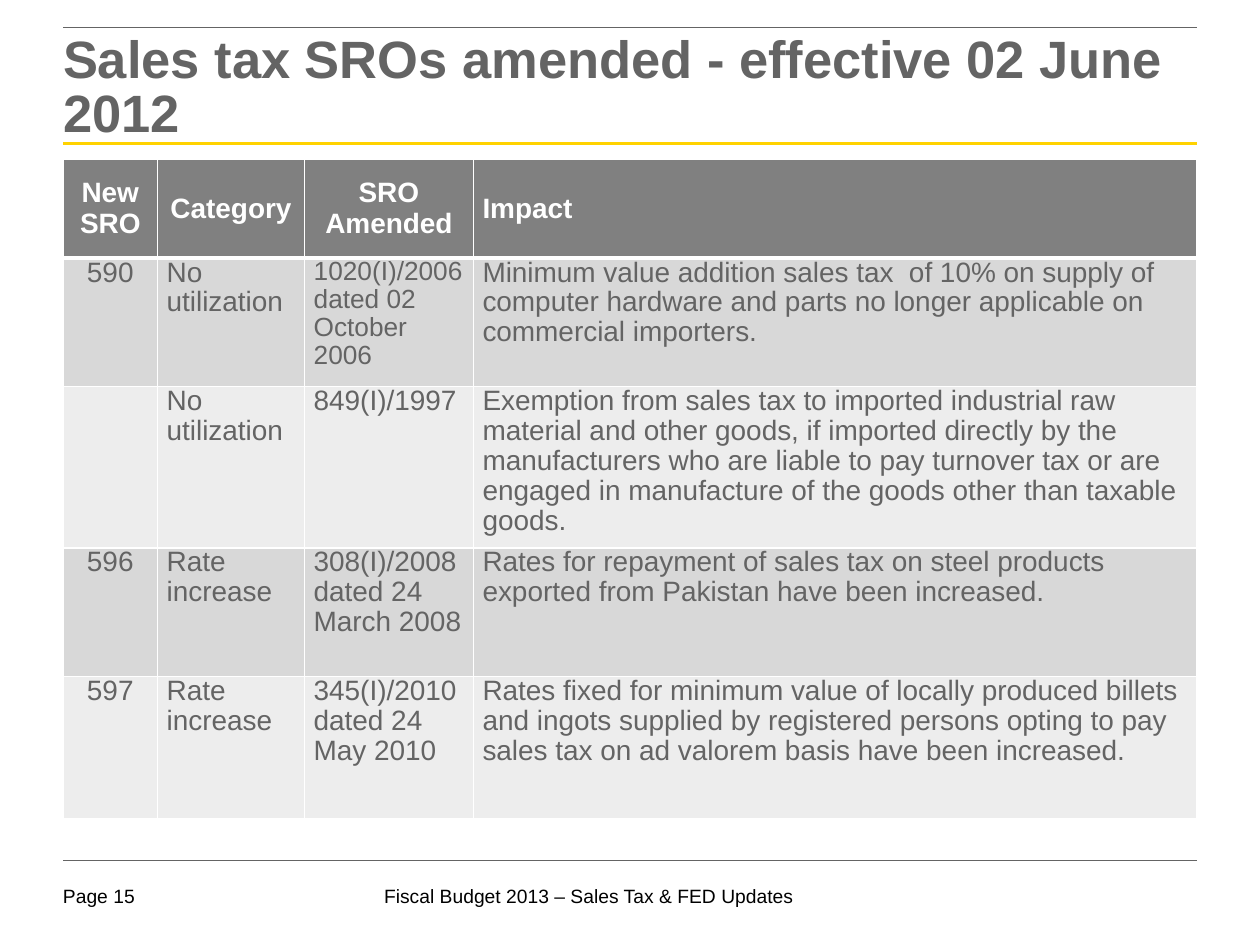
from lxml.etree import SubElement
from pptx import Presentation
from pptx.dml.color import RGBColor
from pptx.enum.shapes import MSO_CONNECTOR
from pptx.enum.text import MSO_ANCHOR, MSO_AUTO_SIZE, PP_ALIGN
from pptx.oxml.ns import qn
from pptx.util import Pt


def color(value):
    return RGBColor.from_string(value)


def style_font(paragraph, size, value, bold=False):
    paragraph.font.name = "Arial"
    paragraph.font.size = Pt(size)
    paragraph.font.bold = bold
    paragraph.font.color.rgb = color(value)


presentation = Presentation()
presentation.slide_width, presentation.slide_height = Pt(720), Pt(540)
slide = presentation.slides.add_slide(presentation.slide_layouts[5])

left, width = 36, 648
rules = [(82, "FFD200", 1.5), (491.75, "646464", 0.25), (15.75, "646464", 0.5)]
for top, value, weight in rules:
    connector = slide.shapes.add_connector(
        MSO_CONNECTOR.STRAIGHT, Pt(left), Pt(top), Pt(left + width), Pt(top))
    connector.line.color.rgb = color(value)
    connector.line.width = Pt(weight)
    SubElement(connector._element.spPr, qn("a:effectLst"))

footers = [("Fiscal Budget 2013 – Sales Tax & FED Updates", 219.5, 266.5),
           ("Page 15", left, 52.5)]
for text, footer_left, footer_width in footers:
    shape = slide.shapes.add_textbox(Pt(footer_left), Pt(505.5), Pt(footer_width), Pt(16))
    frame = shape.text_frame
    frame.margin_left = frame.margin_top = frame.margin_right = frame.margin_bottom = 0
    frame.word_wrap = True
    frame.text = text
    style_font(frame.paragraphs[0], 11, "000000")

title = slide.shapes.title
title.left, title.top, title.width, title.height = Pt(left), Pt(16), Pt(width), Pt(67.5)
frame = title.text_frame
frame.margin_left = frame.margin_right = frame.margin_bottom = 0
frame.margin_top = Pt(3)
frame.word_wrap = True
frame.auto_size = MSO_AUTO_SIZE.NONE
frame.vertical_anchor = MSO_ANCHOR.MIDDLE
frame.text = "Sales tax SROs amended - effective 02 June 2012"
paragraph = frame.paragraphs[0]
paragraph.alignment = PP_ALIGN.LEFT
paragraph.line_spacing = 0.85
style_font(paragraph, 30, "646464", True)

rows = [
    ("New SRO", "Category", "SRO Amended", "Impact"),
    ("590", "No utilization", "1020(I)/2006 dated 02 October 2006",
     "Minimum value addition sales tax  of 10% on supply of computer hardware and parts "
     "no longer applicable on commercial importers."),
    ("", "No utilization", "849(I)/1997",
     "Exemption from sales tax to imported industrial raw material and other goods, if "
     "imported directly by the manufacturers who are liable to pay turnover tax or are "
     "engaged in manufacture of the goods other than taxable goods."),
    ("596", "Rate increase", "308(I)/2008 dated 24 March 2008",
     "Rates for repayment of sales tax on steel products exported from Pakistan have "
     "been increased."),
    ("597", "Rate increase", "345(I)/2010 dated 24 May 2010",
     "Rates fixed for minimum value of locally produced billets and ingots supplied by "
     "registered persons opting to pay sales tax on ad valorem basis have been increased."),
]
column_widths = [54, 84, 96.5, 413.5]
row_heights = [56.5, 73.5, 88.5, 73.5, 81.5]
table = slide.shapes.add_table(
    len(rows), len(column_widths), Pt(left), Pt(91), Pt(width), Pt(sum(row_heights))).table
for column, column_width in zip(table.columns, column_widths):
    column.width = Pt(column_width)

for row_index, (row, row_height) in enumerate(zip(rows, row_heights)):
    table.rows[row_index].height = Pt(row_height)
    header = row_index == 0
    fill = "808080" if header else ("EDEDED", "D8D8D8")[row_index % 2]
    for column_index, text in enumerate(row):
        cell = table.cell(row_index, column_index)
        cell.margin_left = cell.margin_right = Pt(5.25)
        cell.margin_top = cell.margin_bottom = 0
        cell.vertical_anchor = MSO_ANCHOR.MIDDLE if header else MSO_ANCHOR.TOP
        cell.text = text
        paragraph = cell.text_frame.paragraphs[0]
        centered = column_index == 0 or (header and column_index < 3)
        paragraph.alignment = PP_ALIGN.CENTER if centered else PP_ALIGN.LEFT
        paragraph.line_spacing = 1.0 if header else 0.96
        size = 15 if (row_index, column_index) == (1, 2) else 16
        style_font(paragraph, size, "FFFFFF" if header else "646464", header)
        properties = cell._tc.get_or_add_tcPr()
        for side in ("lnL", "lnR", "lnT", "lnB"):
            thick = (row_index, side) in ((0, "lnB"), (1, "lnT"))
            border = SubElement(properties, qn("a:" + side), w=str(Pt(3 if thick else 1)))
            SubElement(SubElement(border, qn("a:solidFill")), qn("a:srgbClr"), val="FFFFFF")
        cell.fill.solid()
        cell.fill.fore_color.rgb = color(fill)

presentation.save("out.pptx")
